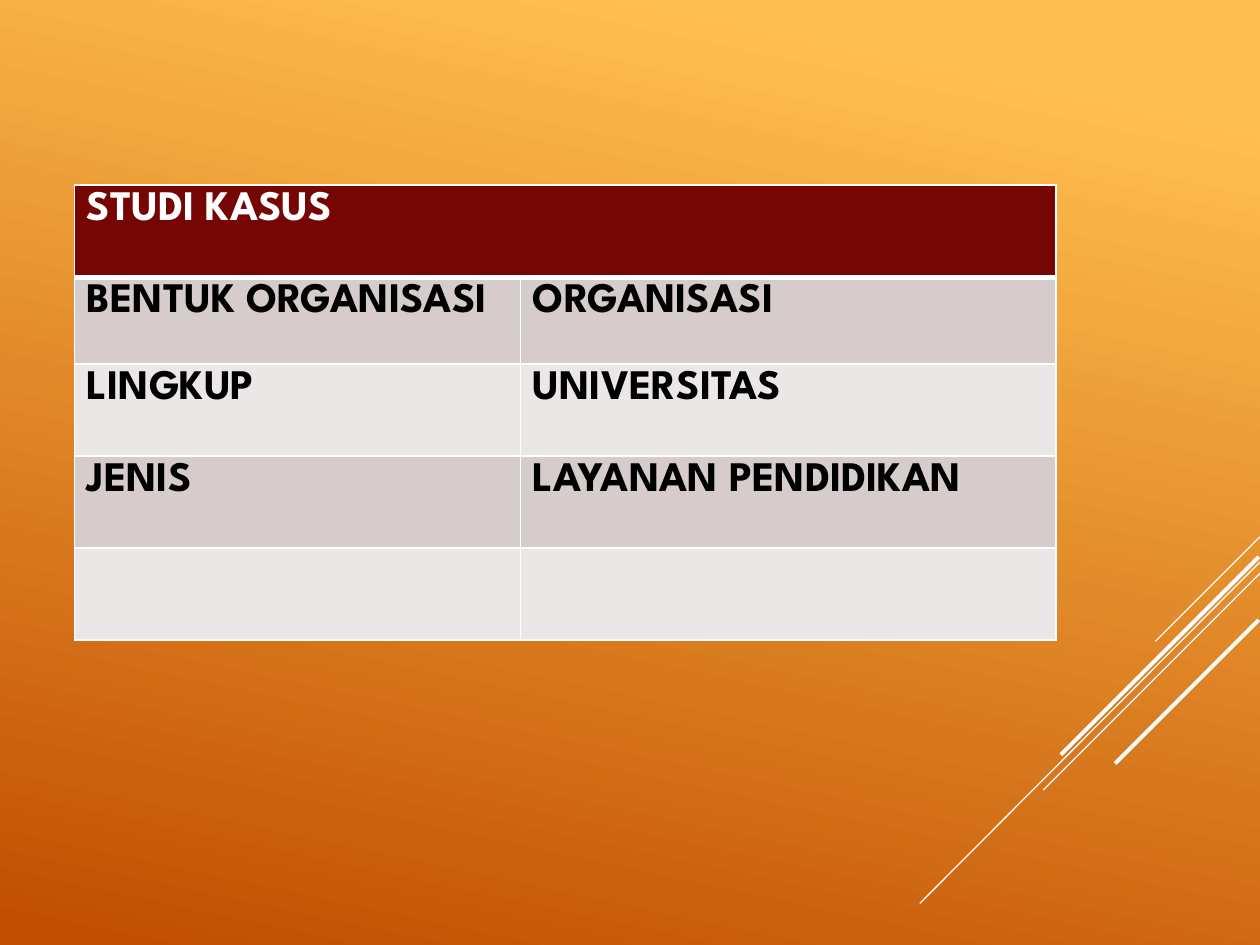
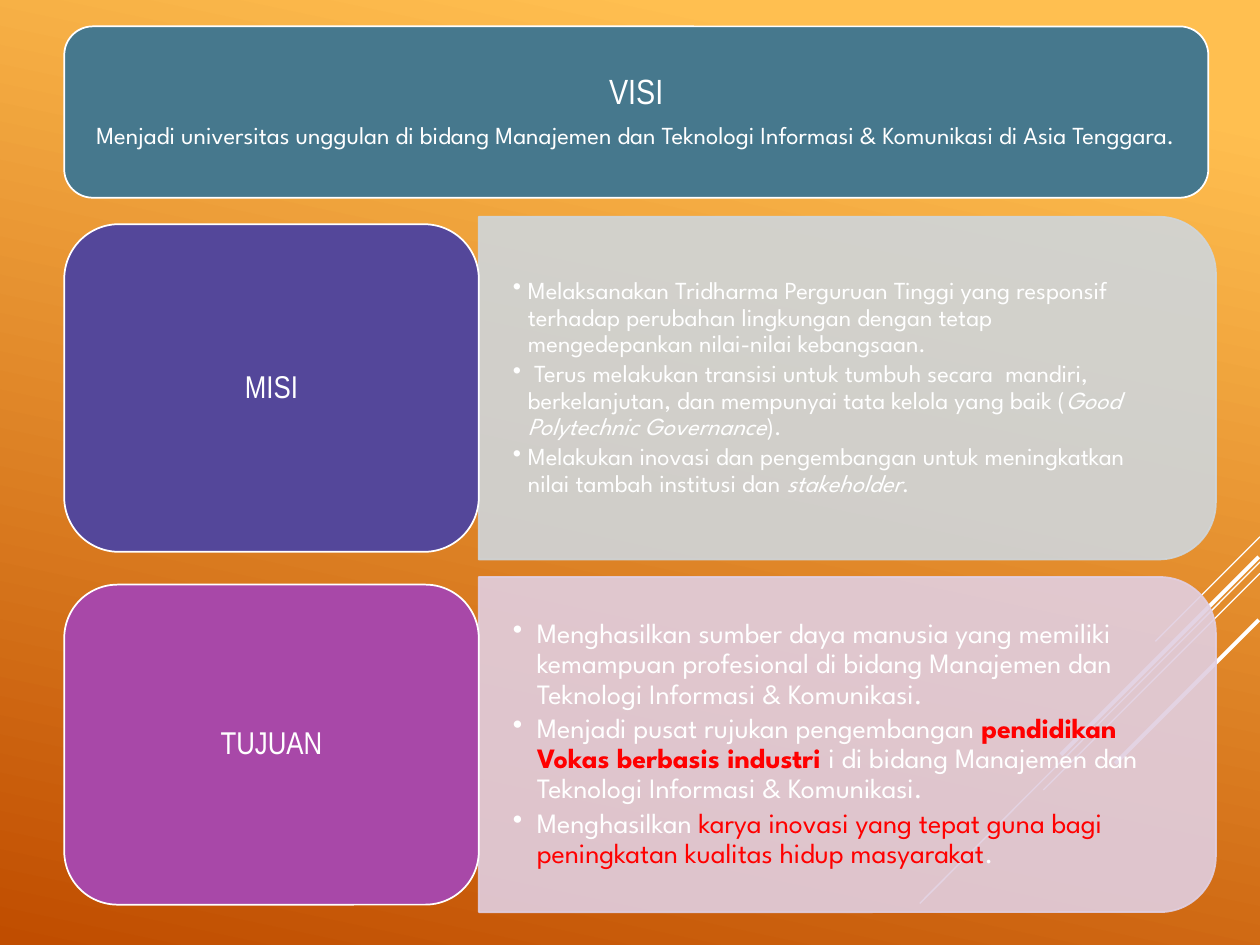
from lxml.etree import SubElement
from pptx import Presentation
from pptx.dml.color import RGBColor
from pptx.enum.shapes import MSO_CONNECTOR, MSO_SHAPE
from pptx.enum.text import MSO_ANCHOR, PP_ALIGN
from pptx.oxml.ns import qn
from pptx.util import Emu, Pt

PX = 9144  # 100 px to the inch
WIDTH, HEIGHT = 1000, 750

WHITE = RGBColor(0xFF, 0xFF, 0xFF)
BLACK = RGBColor(0x00, 0x00, 0x00)
RED = RGBColor(0xFF, 0x00, 0x00)
AMBER = RGBColor(0xFF, 0xBF, 0x50)
RUST = RGBColor(0xC0, 0x4D, 0x00)
MAROON = RGBColor(0x76, 0x06, 0x03)
BAND_DARK = RGBColor(0xD6, 0xCC, 0xCC)
BAND_LIGHT = RGBColor(0xEC, 0xE7, 0xE7)
TEAL = RGBColor(0x46, 0x78, 0x8D)
INDIGO = RGBColor(0x54, 0x47, 0x9A)
PURPLE = RGBColor(0xA8, 0x48, 0xA8)
PALE_BLUE = RGBColor(0xCF, 0xD6, 0xDB)
PALE_PINK = RGBColor(0xE1, 0xCF, 0xE1)

BODY_FONT = "League Spartan"
LABEL_FONT = "Arial Narrow"

# start x, start y, end x, end y, points
CORNER_LINES = [
    (1000, 426, 917, 509, 0.75),
    (1000, 446, 730, 717, 0.75),
    (1000, 455, 828, 627, 0.75),
    (999, 442, 842, 599, 2.25),
    (999, 492, 885, 606, 2.25),
]

CASE_ROWS = [
    ("BENTUK ORGANISASI", "ORGANISASI"),
    ("LINGKUP", "UNIVERSITAS"),
    ("JENIS", "LAYANAN PENDIDIKAN"),
    ("", ""),
]

ITALIC = {"italic": True}
MISSIONS = [
    [("Melaksanakan Tridharma Perguruan Tinggi yang responsif terhadap "
      "perubahan lingkungan dengan tetap mengedepankan nilai-nilai kebangsaan.", {})],
    [(" Terus melakukan transisi untuk tumbuh secara  mandiri, berkelanjutan, "
      "dan mempunyai tata kelola yang baik (", {}),
     ("Good Polytechnic Governance", ITALIC), (").", {})],
    [("Melakukan inovasi dan pengembangan untuk meningkatkan nilai tambah "
      "institusi dan ", {}),
     ("stakeholder", ITALIC), (".", {})],
]
GOALS = [
    [("Menghasilkan sumber daya manusia yang memiliki kemampuan profesional "
      "di bidang Manajemen dan Teknologi Informasi & Komunikasi.", {})],
    [("Menjadi pusat rujukan pengembangan ", {}),
     ("pendidikan Vokas berbasis industri ", {"color": RED, "bold": True}),
     ("i di bidang Manajemen dan Teknologi Informasi & Komunikasi.", {})],
    [("Menghasilkan ", {}),
     ("karya inovasi yang tepat guna bagi peningkatan kualitas hidup masyarakat",
      {"color": RED}),
     (".", {})],
]


def lengths(*values):
    return [Emu(round(value * PX)) for value in values]


class Deck:
    """Holds the shared style and the slide being built."""

    def __init__(self):
        self.presentation = Presentation()
        size = lengths(WIDTH, HEIGHT)
        self.presentation.slide_width, self.presentation.slide_height = size
        self.slide = None

    def new_slide(self):
        self.slide = self.presentation.slides.add_slide(
            self.presentation.slide_layouts[6])
        fill = self.slide.background.fill
        fill.gradient()
        fill.gradient_angle = 360 - 102
        stops = zip(fill.gradient_stops, (AMBER, RUST), (0.1, 1))
        for stop, color, position in stops:
            stop.color.rgb = color
            stop.position = position
        for line in CORNER_LINES:
            self.line(*line)

    def line(self, x1, y1, x2, y2, points):
        connector = self.slide.shapes.add_connector(
            MSO_CONNECTOR.STRAIGHT, *lengths(x1, y1, x2, y2))
        connector.line.color.rgb = WHITE
        connector.line.width = Pt(points)
        SubElement(connector.element.spPr, qn("a:effectLst"))

    def shape(self, kind, box, fill, outline):
        shape = self.slide.shapes.add_shape(kind, *lengths(*box))
        shape.shadow.inherit = False
        shape.fill.solid()
        shape.fill.fore_color.rgb = fill
        shape.line.color.rgb = outline
        shape.line.width = Pt(1)
        return shape

    def run(self, paragraph, text, size, font=BODY_FONT, color=WHITE,
            bold=False, italic=False):
        run = paragraph.add_run()
        run.text = text
        run.font.name = font
        run.font.size = Pt(size)
        run.font.color.rgb = color
        run.font.bold = bold
        run.font.italic = italic

    def frame(self, shape, side, edge):
        """Prepare a wrapped, middle-anchored text frame with the given insets."""
        frame = shape.text_frame
        frame.word_wrap = True
        frame.vertical_anchor = MSO_ANCHOR.MIDDLE
        frame.margin_left, frame.margin_top = lengths(side, edge)
        frame.margin_right, frame.margin_bottom = lengths(side, edge)
        return frame

    def paragraph(self, frame, index, space_after):
        paragraph = frame.add_paragraph() if index else frame.paragraphs[0]
        paragraph.line_spacing = 0.9
        paragraph.space_after = Pt(space_after)
        return paragraph

    def card(self, box, fill, texts):
        """Rounded card with centred (text, size, font) paragraphs."""
        card = self.shape(MSO_SHAPE.ROUNDED_RECTANGLE, box, fill, WHITE)
        frame = self.frame(card, 7, 4)
        for index, (text, size, font) in enumerate(texts):
            paragraph = self.paragraph(frame, index, size * 0.35)
            paragraph.alignment = PP_ALIGN.CENTER
            self.run(paragraph, text, size, font)

    def panel(self, box, fill):
        """Translucent panel rounded on its right side; box is as seen."""
        left, top, width, height = box
        shift = (width - height) / 2
        panel = self.shape(MSO_SHAPE.ROUND_2_SAME_RECTANGLE,
                           (left + shift, top - shift, height, width), fill, fill)
        panel.rotation = 90
        for color in panel.element.spPr.iter(qn("a:srgbClr")):
            SubElement(color, qn("a:alpha"), val="90000")

    def bullets(self, box, items, size, indent):
        text_box = self.slide.shapes.add_textbox(*lengths(*box))
        frame = self.frame(text_box, 27, 14)
        margin = indent * PX
        for index, runs in enumerate(items):
            paragraph = self.paragraph(frame, index, size * 0.15)
            paragraph.level = 1
            paragraph.alignment = PP_ALIGN.LEFT
            properties = paragraph._p.get_or_add_pPr()
            properties.set("marL", str(margin))
            properties.set("indent", str(-margin))
            SubElement(properties, qn("a:buChar"), char="•")
            for text, style in runs:
                self.run(paragraph, text, size, **style)

    def labelled_panel(self, label, top, height, colors, items, size, indent):
        """Label card on the left, with a slightly taller bullet panel beside it."""
        card_color, panel_color = colors
        panel_top, panel_height = top - 6, height + 12
        self.panel((380, panel_top, 585, panel_height), panel_color)
        self.bullets((380, panel_top + 13, 571, panel_height - 26),
                     items, size, indent)
        self.card((51, top, 329, height), card_color, [(label, 18, LABEL_FONT)])

    def cell(self, cell, text, fill, color, bottom=1):
        properties = cell._tc.get_or_add_tcPr()
        for side, points in (("L", 1), ("R", 1), ("T", 1), ("B", bottom)):
            border = SubElement(properties, qn(f"a:ln{side}"), w=str(Pt(points)))
            solid = SubElement(border, qn("a:solidFill"))
            SubElement(solid, qn("a:srgbClr"), val=str(WHITE))
        cell.fill.solid()
        cell.fill.fore_color.rgb = fill
        if text:
            self.run(cell.text_frame.paragraphs[0], text, 24,
                     color=color, bold=True)

    def table(self, left, top, columns, heights, title, rows):
        """Banded table whose title spans the first row."""
        box = lengths(left, top, sum(columns), sum(heights))
        table = self.slide.shapes.add_table(
            len(heights), len(columns), *box).table
        for column, width in zip(table.columns, lengths(*columns)):
            column.width = width
        for row, height in zip(table.rows, lengths(*heights)):
            row.height = height
        table.cell(0, 0).merge(table.cell(0, len(columns) - 1))
        for index in range(len(columns)):
            self.cell(table.cell(0, index), "" if index else title,
                      MAROON, WHITE, bottom=3)
        for row_index, texts in enumerate(rows, 1):
            band = BAND_DARK if row_index % 2 else BAND_LIGHT
            for column_index, text in enumerate(texts):
                self.cell(table.cell(row_index, column_index), text, band, BLACK)


def main():
    deck = Deck()

    deck.new_slide()
    deck.table(59, 147, (354, 425), (73, 69, 73, 73, 73),
               "STUDI KASUS", CASE_ROWS)

    deck.new_slide()
    deck.card((51, 21, 908, 136), TEAL, [
        ("VISI", 20, LABEL_FONT),
        ("Menjadi universitas unggulan di bidang Manajemen dan Teknologi "
         "Informasi & Komunikasi di Asia Tenggara.", 14, BODY_FONT),
    ])
    deck.labelled_panel("MISI", 178, 260, (INDIGO, PALE_BLUE), MISSIONS, 14, 12)
    deck.labelled_panel("TUJUAN", 464, 254, (PURPLE, PALE_PINK), GOALS, 16, 19)

    deck.presentation.save("out.pptx")


if __name__ == "__main__":
    main()
